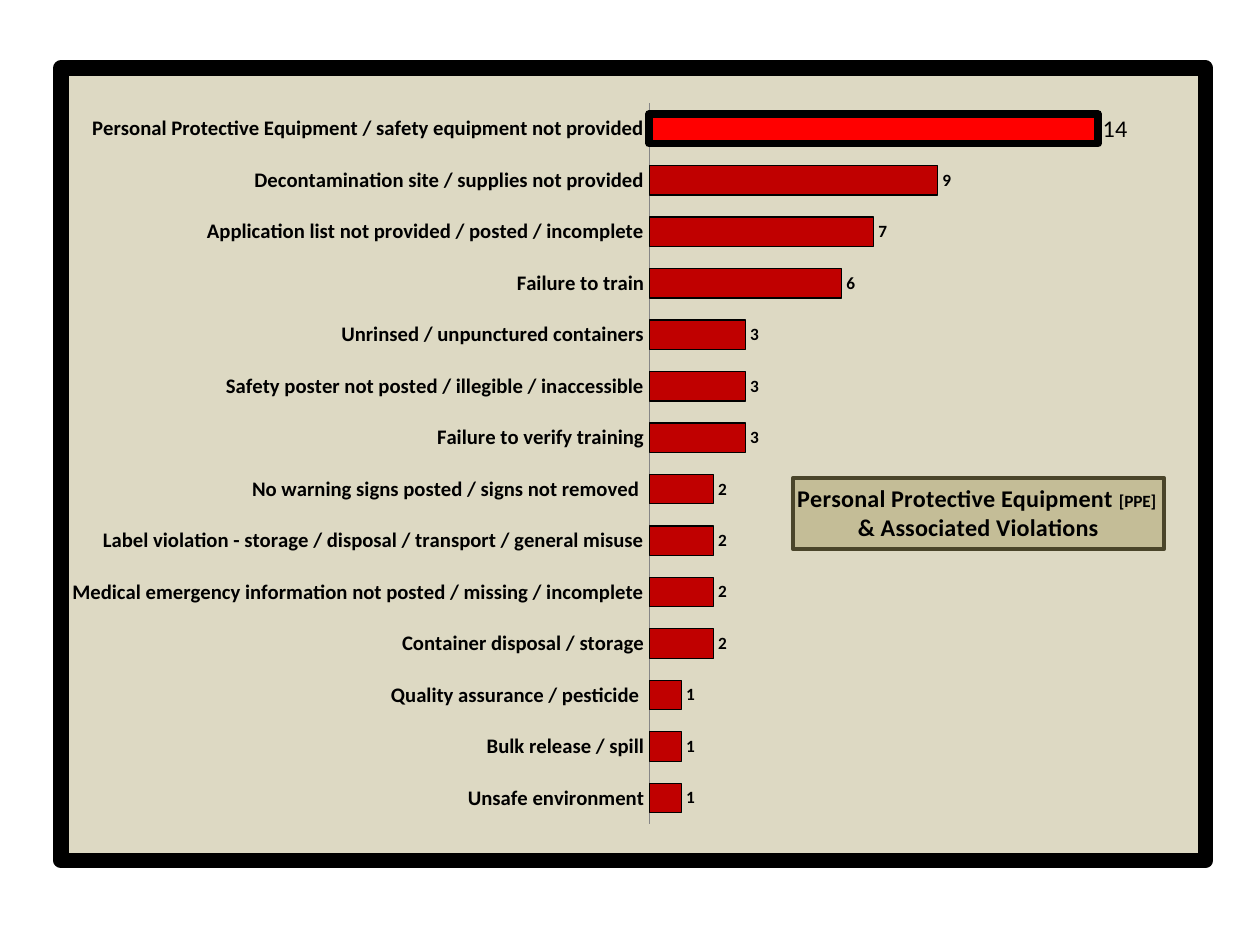
from lxml import etree
from pptx import Presentation
from pptx.chart import data as chart_data
from pptx.dml.color import RGBColor
from pptx.enum import chart as chart_enum, text
from pptx.oxml import ns, parse_xml
from pptx.util import Cm, Pt

BLACK = RGBColor(0x00, 0x00, 0x00)
GREY = RGBColor(0x86, 0x86, 0x86)
SAND = RGBColor(0xDD, 0xD9, 0xC3)
KHAKI = RGBColor(0xC4, 0xBD, 0x97)
OLIVE = RGBColor(0x4A, 0x45, 0x2A)
DARK_RED = RGBColor(0xC0, 0x00, 0x00)
BRIGHT_RED = RGBColor(0xFF, 0x00, 0x00)

VIOLATIONS = [
    ("Unsafe environment", 1),
    ("Bulk release / spill", 1),
    ("Quality assurance / pesticide ", 1),
    ("Container disposal / storage", 2),
    ("Medical emergency information not posted / missing / incomplete", 2),
    ("Label violation - storage / disposal / transport / general misuse", 2),
    ("No warning signs posted / signs not removed ", 2),
    ("Failure to verify training", 3),
    ("Safety poster not posted / illegible / inaccessible", 3),
    ("Unrinsed / unpunctured containers", 3),
    ("Failure to train", 6),
    ("Application list not provided / posted / incomplete", 7),
    ("Decontamination site / supplies not provided", 9),
    ("Personal Protective Equipment / safety equipment not provided", 14),
]
TITLE_LINES = [
    [("Personal Protective Equipment ", 14), ("[PPE] ", 10)],
    [("& Associated Violations", 14)],
]


def set_values(target, values):
    for name, value in values.items():
        setattr(target, name, value)


def set_font(font, size, bold):
    set_values(font, {"name": "Calibri", "size": Pt(size), "bold": bold})
    font.color.rgb = BLACK


def paint(chart_format, fill, line, width):
    chart_format.fill.solid()
    chart_format.fill.fore_color.rgb = fill
    chart_format.line.color.rgb = line
    chart_format.line.width = Pt(width)


def area_properties(fill, line=""):
    return parse_xml(
        f'<c:spPr {ns.nsdecls("c", "a")}><a:solidFill><a:srgbClr val="{fill}"/>'
        f"</a:solidFill>{line}</c:spPr>"
    )


def set_layout(parent, index, **places):
    for old_layout in parent.findall(ns.qn("c:layout")):
        parent.remove(old_layout)
    layout = parse_xml(f'<c:layout {ns.nsdecls("c")}><c:manualLayout/></c:layout>')
    for name, value in places.items():
        etree.SubElement(layout[0], ns.qn(f"c:{name}")).set("val", str(value))
    parent.insert(index, layout)


def add_bar_chart(slide):
    values = chart_data.CategoryChartData()
    values.categories = [name for name, count in VIOLATIONS]
    values.add_series("Series 1", [count for name, count in VIOLATIONS])
    frame = slide.shapes.add_chart(
        chart_enum.XL_CHART_TYPE.BAR_CLUSTERED,
        Cm(1.07), Cm(1.22), Cm(23.39), Cm(16.28), values,
    )
    chart = frame.chart
    chart.has_legend = False
    set_font(chart.font, 10, False)
    return chart


def format_backgrounds(chart):
    border = (
        f'<a:ln w="{Pt(9)}"><a:solidFill><a:srgbClr val="{BLACK}"/></a:solidFill>'
        "<a:round/></a:ln>"
    )
    chart_element = chart.element.find(ns.qn("c:chart"))
    chart_element.addnext(area_properties(SAND, border))
    plot_area = chart_element.find(ns.qn("c:plotArea"))
    plot_area.append(area_properties(SAND))
    set_layout(plot_area, 0, layoutTarget="inner", xMode="edge", yMode="edge",
               x=0.514, y=0.044, w=0.448, h=0.91)


def format_axes(chart):
    category_axis = chart.category_axis
    category_axis.major_tick_mark = chart_enum.XL_TICK_MARK.NONE
    category_axis.format.line.color.rgb = GREY
    set_font(category_axis.tick_labels.font, 12, True)
    set_values(chart.value_axis, {
        "minimum_scale": 0,
        "maximum_scale": 16,
        "has_major_gridlines": False,
        "visible": False,
    })


def format_bars(chart):
    plot = chart.plots[0]
    set_values(plot, {"gap_width": 75, "vary_by_categories": False})
    series = plot.series[0]
    paint(series.format, DARK_RED, BLACK, 0.75)
    outside = chart_enum.XL_LABEL_POSITION.OUTSIDE_END
    labels = series.data_labels
    set_values(labels, {"show_value": True, "position": outside})
    set_font(labels.font, 10, True)
    top_point = series.points[len(VIOLATIONS) - 1]
    paint(top_point.format, BRIGHT_RED, BLACK, 4.5)
    set_font(top_point.data_label.font, 14, False)
    top_point.data_label.position = outside


def add_title(chart):
    title = chart.chart_title
    title.include_in_layout = False
    frame = title.text_frame
    for index, line in enumerate(TITLE_LINES):
        paragraph = frame.add_paragraph() if index else frame.paragraphs[0]
        paragraph.alignment = text.PP_ALIGN.CENTER
        for words, size in line:
            run = paragraph.add_run()
            run.text = words
            set_font(run.font, size, True)
    paint(title.format, KHAKI, OLIVE, 2.25)
    set_layout(title.element, 1, xMode="edge", yMode="edge", x=0.64, y=0.517)


def main():
    presentation = Presentation()
    set_values(presentation, {"slide_width": Cm(25.4), "slide_height": Cm(19.05)})
    slide = presentation.slides.add_slide(presentation.slide_layouts[6])
    chart = add_bar_chart(slide)
    format_backgrounds(chart)
    format_axes(chart)
    format_bars(chart)
    add_title(chart)
    presentation.save("out.pptx")


if __name__ == "__main__":
    main()
